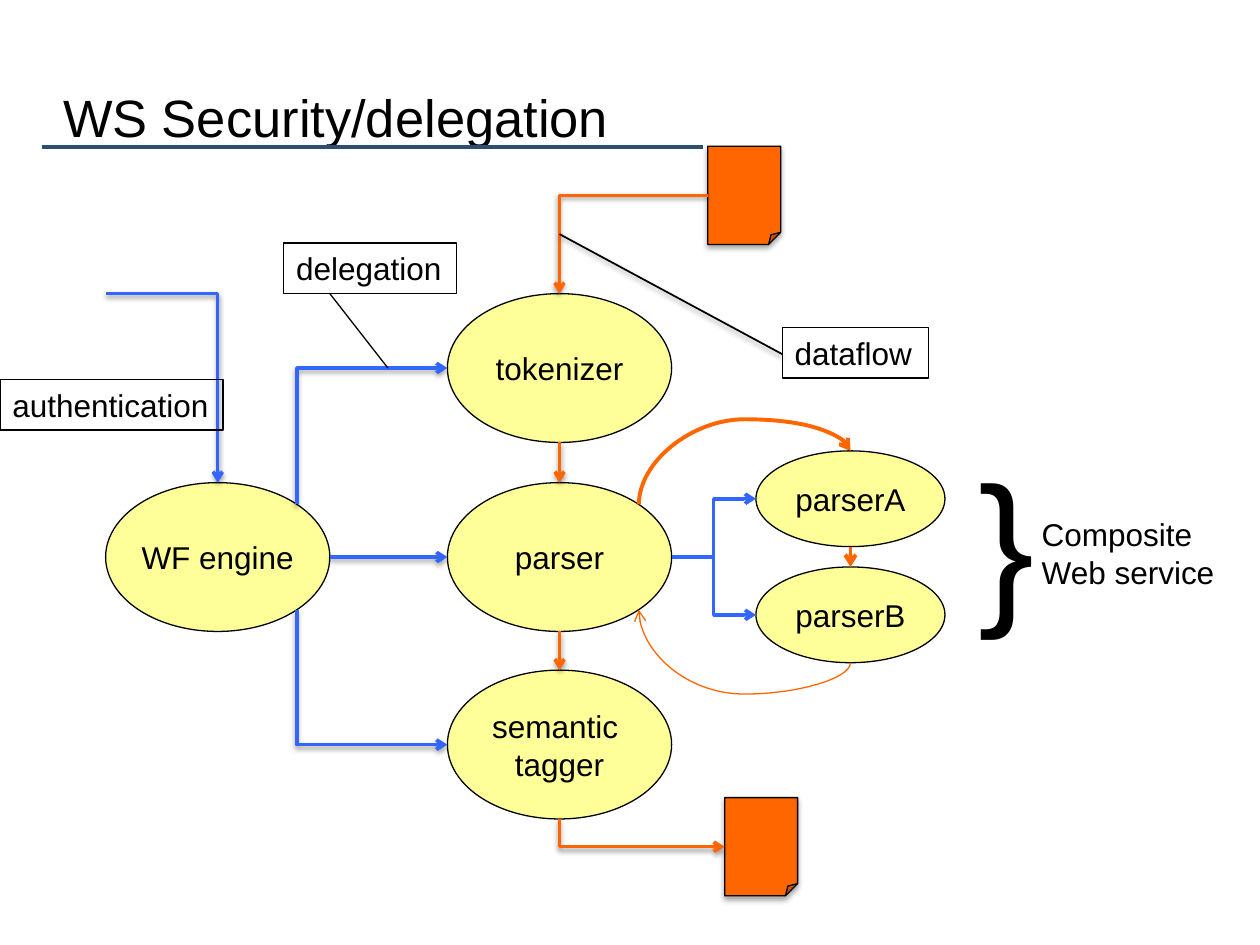
import lxml.etree
import pptx
import pptx.dml.color
import pptx.enum.shapes
import pptx.enum.text
import pptx.oxml.ns
import pptx.util

Cm = pptx.util.Cm
Pt = pptx.util.Pt
RGBColor = pptx.dml.color.RGBColor
MSO_SHAPE = pptx.enum.shapes.MSO_SHAPE
MSO_CONNECTOR = pptx.enum.shapes.MSO_CONNECTOR
MSO_ANCHOR = pptx.enum.text.MSO_ANCHOR
MSO_AUTO_SIZE = pptx.enum.text.MSO_AUTO_SIZE
PP_ALIGN = pptx.enum.text.PP_ALIGN
qn = pptx.oxml.ns.qn

BLACK = RGBColor(0x00, 0x00, 0x00)
NAVY = RGBColor(0x2D, 0x4E, 0x6F)
YELLOW = RGBColor(0xFF, 0xFF, 0x99)
BLUE = RGBColor(0x33, 0x66, 0xFF)
ORANGE = RGBColor(0xFF, 0x66, 0x00)

DIAGONAL = 0.5 ** 1.5
NEAR, FAR = 0.5 - DIAGONAL, 0.5 + DIAGONAL
SITES = {
    "top": (0.5, 0), "left": (0, 0.5), "bottom": (0.5, 1), "right": (1, 0.5),
    "top right": (FAR, NEAR), "bottom right": (FAR, FAR),
}
ELLIPSE_SITES = {"top": 0, "left": 2, "bottom": 4, "bottom right": 5, "right": 6, "top right": 7}
PAGE_SITES = {"top": 0, "left": 1, "bottom": 2, "right": 3}


class Diagram:
    font = "Arial"
    size = 18

    def __init__(self, s):
        self.s = s

    def add_lines(self, tf, lines, size=None, align=PP_ALIGN.LEFT):
        for i, line in enumerate(lines):
            p = tf.add_paragraph() if i else tf.paragraphs[0]
            p.alignment = align
            r = p.add_run()
            r.text = line
            r.font.name = self.font
            r.font.size = Pt(size or self.size)
            r.font.color.rgb = BLACK

    def shadow(self, sp, alpha, dist):
        effects = sp._element.spPr.find(qn("a:effectLst"))
        shadow = lxml.etree.SubElement(effects, qn("a:outerShdw"), blurRad=str(Pt(3.1)),
                                       dist=str(Pt(dist)), dir="5400000", rotWithShape="0")
        color = lxml.etree.SubElement(shadow, qn("a:srgbClr"), val=str(BLACK))
        lxml.etree.SubElement(color, qn("a:alpha"), val=str(alpha * 1000))

    def title(self, text):
        sp = self.s.shapes.title
        sp.left, sp.top, sp.width, sp.height = Cm(1.27), Cm(0.76), Cm(22.86), Cm(3.18)
        tf = sp.text_frame
        tf.margin_left = 0
        tf.vertical_anchor = MSO_ANCHOR.MIDDLE
        self.add_lines(tf, [text], 30)

    def shape(self, kind, x, y, w, h, fill=None):
        sp = self.s.shapes.add_shape(kind, Cm(x), Cm(y), Cm(w), Cm(h))
        sp.shadow.inherit = False
        if fill is None:
            sp.fill.background()
        else:
            sp.fill.solid()
            sp.fill.fore_color.rgb = fill
        sp.line.color.rgb = BLACK
        sp.line.width = Pt(0.75)
        return sp

    def service(self, x, y, *lines, w=4.52, h=3):
        sp = self.shape(MSO_SHAPE.OVAL, x, y, w, h, YELLOW)
        tf = sp.text_frame
        tf.word_wrap = False
        tf.vertical_anchor = MSO_ANCHOR.MIDDLE
        self.add_lines(tf, lines, align=PP_ALIGN.CENTER)
        return sp

    def document(self, x, y):
        sp = self.shape(MSO_SHAPE.FOLDED_CORNER, x, y, 1.47, 1.98, ORANGE)
        self.shadow(sp, 35, 1.8)
        return sp

    def label(self, x, y, w, text):
        tf = self.shape(MSO_SHAPE.RECTANGLE, x, y, w, 1.02).text_frame
        tf.word_wrap = False
        tf.auto_size = MSO_AUTO_SIZE.SHAPE_TO_FIT_TEXT
        tf.vertical_anchor = MSO_ANCHOR.TOP
        self.add_lines(tf, [text])

    def text(self, x, y, w, h, *lines, size=None):
        tf = self.s.shapes.add_textbox(Cm(x), Cm(y), Cm(w), Cm(h)).text_frame
        tf.word_wrap = False
        tf.auto_size = MSO_AUTO_SIZE.SHAPE_TO_FIT_TEXT
        self.add_lines(tf, lines, size)

    def style_line(self, sp, color, width, shadow):
        sp.line.color.rgb = color
        sp.line.width = Pt(width)
        lxml.etree.SubElement(sp._element.spPr, qn("a:effectLst"))
        if shadow:
            self.shadow(sp, 38, 1.6)

    def line(self, x1, y1, x2, y2, color=BLACK, width=0.75, shadow=False):
        sp = self.s.shapes.add_connector(MSO_CONNECTOR.STRAIGHT, Cm(x1), Cm(y1), Cm(x2), Cm(y2))
        self.style_line(sp, color, width, shadow)

    def site(self, sp, name):
        fx, fy = SITES[name]
        sites = ELLIPSE_SITES if sp.auto_shape_type == MSO_SHAPE.OVAL else PAGE_SITES
        return sp.left + sp.width * fx, sp.top + sp.height * fy, sites[name]

    def link(self, start, start_site, end, end_site, color, preset="bentConnector3",
             width=2, shadow=True, adjust=None):
        x2, y2, end_index = self.site(end, end_site)
        kind = MSO_CONNECTOR.CURVE if preset.startswith("curved") else MSO_CONNECTOR.ELBOW
        sp = self.s.shapes.add_connector(kind, 0, 0, 0, 0)
        if start_site:
            x1, y1, start_index = self.site(start, start_site)
            sp._connect_begin_to(start, start_index)
        else:
            x1, y1 = start
        sp._connect_end_to(end, end_index)

        dx, dy = x2 - x1, y2 - y1
        w, h = abs(dx), abs(dy)
        flip_h, flip_v = dx < 0, dy < 0
        xfrm = sp._element.spPr.find(qn("a:xfrm"))
        if start_site not in (None, "left", "right"):
            w, h = h, w
            flip_h, flip_v = dy < 0, dx > 0
            xfrm.set("rot", "5400000")
        sp.left, sp.top = round((x1 + x2 - w) / 2), round((y1 + y2 - h) / 2)
        sp.width, sp.height = round(w), round(h)
        for name, flipped in (("flipH", flip_h), ("flipV", flip_v)):
            if flipped:
                xfrm.set(name, "1")

        geom = sp._element.spPr.find(qn("a:prstGeom"))
        geom.set("prst", preset)
        if adjust is not None:
            guides = geom.find(qn("a:avLst"))
            lxml.etree.SubElement(guides, qn("a:gd"), name="adj1", fmla=f"val {adjust}")
        self.style_line(sp, color, width, shadow)
        ln = sp._element.spPr.find(qn("a:ln"))
        lxml.etree.SubElement(ln, qn("a:tailEnd"), type="arrow")


def main():
    prs = pptx.Presentation()
    prs.slide_width, prs.slide_height = Cm(25.4), Cm(19.05)
    d = Diagram(prs.slides.add_slide(prs.slide_layouts[5]))

    d.line(0.84, 2.97, 14.17, 2.97, NAVY, 2.25)
    d.title("WS Security/delegation")

    tokenizer = d.service(9.02, 5.92, "tokenizer")
    parser = d.service(9.02, 9.73, "parser")
    tagger = d.service(9.02, 13.51, "semantic ", "tagger")
    engine = d.service(2.13, 9.73, "WF engine")
    parser_a, parser_b = [d.service(15.24, y, name, w=3.81, h=1.93)
                          for y, name in ((9.09, "parserA"), (11.43, "parserB"))]
    source = d.document(14.27, 2.95)
    result = d.document(14.61, 16.08)

    corner = "bentConnector2"
    curve = "curvedConnector3"
    d.link((Cm(2.13), Cm(5.92)), None, engine, "top", BLUE, corner)
    d.link(engine, "top right", tokenizer, "left", BLUE, corner)
    d.link(engine, "right", parser, "left", BLUE)
    d.link(engine, "bottom right", tagger, "left", BLUE, corner)
    d.link(source, "left", tokenizer, "top", ORANGE, corner)
    d.link(tokenizer, "bottom", parser, "top", ORANGE)
    d.link(parser, "bottom", tagger, "top", ORANGE)
    d.link(tagger, "bottom", result, "left", ORANGE, corner)
    for part in (parser_a, parser_b):
        d.link(parser, "right", part, "left", BLUE, shadow=False)
    d.link(parser, "top right", parser_a, "top", ORANGE, curve, 2.25, False, 159100)
    d.link(parser_a, "bottom", parser_b, "top", ORANGE, width=2.25, shadow=False)
    d.link(parser_b, "bottom", parser, "bottom right", ORANGE, curve, 0.75, False, -59100)

    d.label(0, 7.65, 4.5, "authentication")
    d.label(15.77, 6.6, 2.95, "dataflow")
    d.label(5.72, 4.9, 3.48, "delegation")
    d.line(15.77, 7.14, 11.28, 4.72, width=1, shadow=True)
    d.line(6.65, 5.92, 7.82, 7.42)

    d.text(20.75, 10.26, 4.04, 1.8, "Composite", "Web service")
    d.text(19.48, 8.69, 1.65, 4.37, "}", size=96)

    prs.save("out.pptx")


if __name__ == "__main__":
    main()
